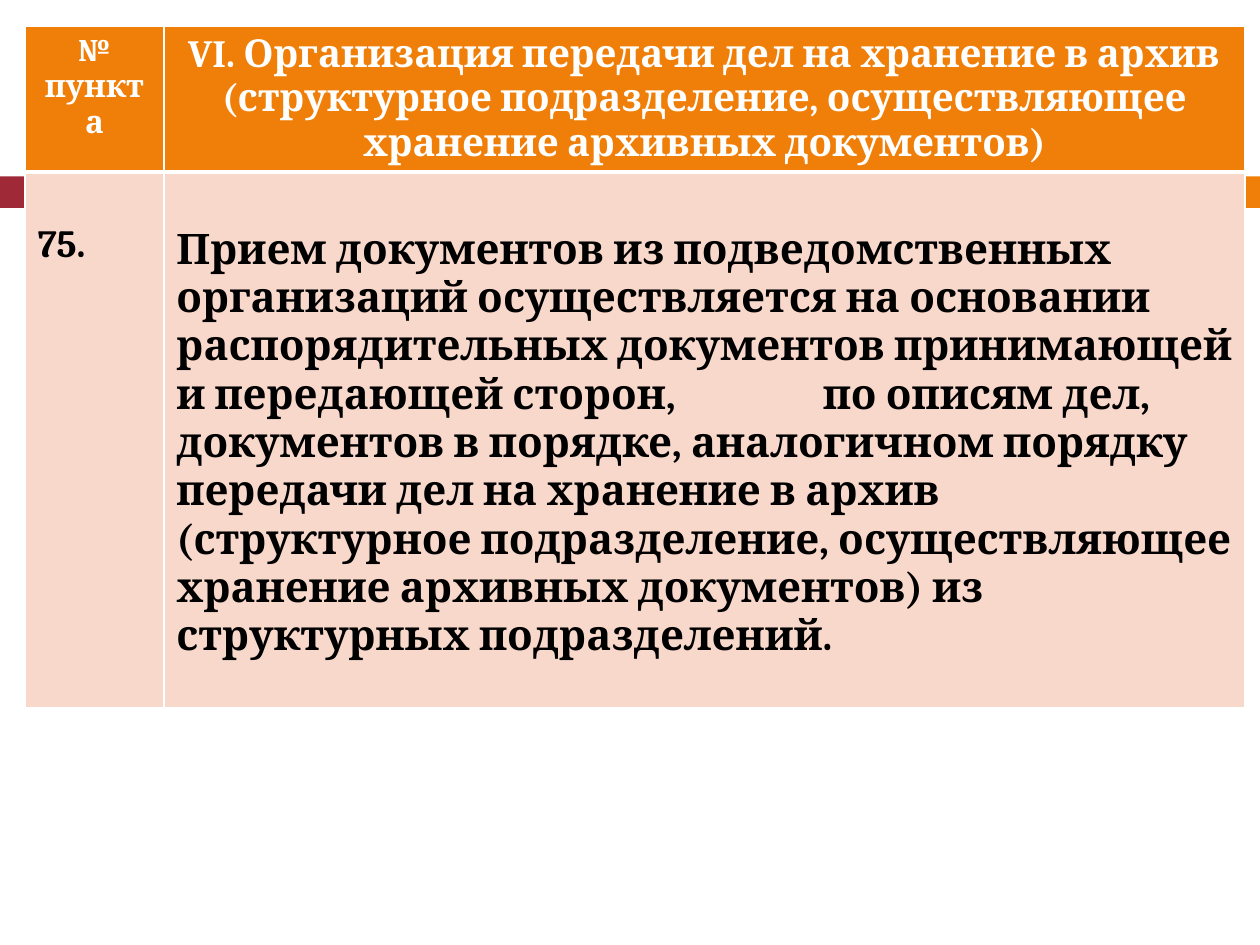
from dataclasses import dataclass

from lxml import etree
from pptx import Presentation
from pptx.dml.color import RGBColor
from pptx.enum.shapes import MSO_SHAPE
from pptx.enum.text import PP_ALIGN
from pptx.oxml.ns import qn
from pptx.util import Inches, Pt

RECT = MSO_SHAPE.RECTANGLE
LEFT = PP_ALIGN.LEFT
CENTER = PP_ALIGN.CENTER


@dataclass(frozen=True)
class Theme:
    font: str = "Cambria"
    red: str = "9F2936"
    orange: str = "F07F09"
    pink: str = "F9D8CC"
    white: str = "FFFFFF"
    black: str = "000000"
    small: int = 18
    head: int = 22
    body: int = 24
    thin: int = 1
    thick: int = 3


THEME = Theme()

HEADS = (
    ("№ пункта", THEME.small),
    ("VI. Организация передачи дел на хранение в архив "
     "(структурное подразделение, осуществляющее хранение архивных документов)",
     THEME.head),
)
RULE = (
    "Прием документов из подведомственных организаций осуществляется "
    "на основании распорядительных документов принимающей и передающей сторон,"
    "\tпо описям дел, документов в порядке, аналогичном порядку передачи дел "
    "на хранение в архив (структурное подразделение, осуществляющее хранение "
    "архивных документов) из структурных подразделений."
)
ITEMS = (("75.", THEME.head, 0.4), (RULE, THEME.body, 0.43))


def add_bar(slide, left, width, color):
    bar = slide.shapes.add_shape(
        RECT, Inches(left), Inches(1.4), Inches(width), Inches(0.25))
    bar.shadow.inherit = False
    bar.fill.solid()
    bar.fill.fore_color.rgb = RGBColor.from_string(color)
    bar.line.fill.background()


def set_edges(cell, top, base):
    props = cell._tc.get_or_add_tcPr()
    sides = (("L", THEME.thin), ("R", THEME.thin), ("T", top), ("B", base))
    for spot, (side, width) in enumerate(sides):
        line = etree.Element(qn(f"a:ln{side}"), w=str(Pt(width)))
        fill = etree.SubElement(line, qn("a:solidFill"))
        etree.SubElement(fill, qn("a:srgbClr"), val=THEME.white)
        props.insert(spot, line)


def set_cell(cell, text, size, color, back, align, top=0.05):
    cell.fill.solid()
    cell.fill.fore_color.rgb = RGBColor.from_string(back)
    cell.margin_top = Inches(top)
    cell.text_frame.text = text
    para = cell.text_frame.paragraphs[0]
    para.alignment = align
    for run in para.runs:
        run.font.name = THEME.font
        run.font.size = Pt(size)
        run.font.bold = True
        run.font.color.rgb = RGBColor.from_string(color)


def set_tab(cell, place):
    props = cell.text_frame.paragraphs[0]._p.get_or_add_pPr()
    tabs = etree.SubElement(props, qn("a:tabLst"))
    etree.SubElement(tabs, qn("a:tab"), pos=str(Inches(place)), algn="l")


def add_rules(slide):
    frame = slide.shapes.add_table(
        2, 2, Inches(0.2), Inches(0.21), Inches(9.68), Inches(5.4))
    table = frame.table
    for col, width in zip(table.columns, (1.1, 8.58)):
        col.width = Inches(width)
    for row, height in zip(table.rows, (1.15, 4.25)):
        row.height = Inches(height)
    for col, (text, size) in enumerate(HEADS):
        cell = table.cell(0, col)
        set_cell(cell, text, size, THEME.white, THEME.orange, CENTER)
        set_edges(cell, THEME.thin, THEME.thick)
    for col, (text, size, top) in enumerate(ITEMS):
        cell = table.cell(1, col)
        set_cell(cell, text, size, THEME.black, THEME.pink, LEFT, top)
        set_edges(cell, THEME.thick, THEME.thin)
    set_tab(table.cell(1, 1), 5.13)


def main():
    deck = Presentation()
    deck.slide_width = Inches(10)
    deck.slide_height = Inches(7.5)
    slide = deck.slides.add_slide(deck.slide_layouts[6])
    add_bar(slide, 0, 0.58, THEME.red)
    add_bar(slide, 0.65, 9.35, THEME.orange)
    add_rules(slide)
    deck.save("out.pptx")


if __name__ == "__main__":
    main()
